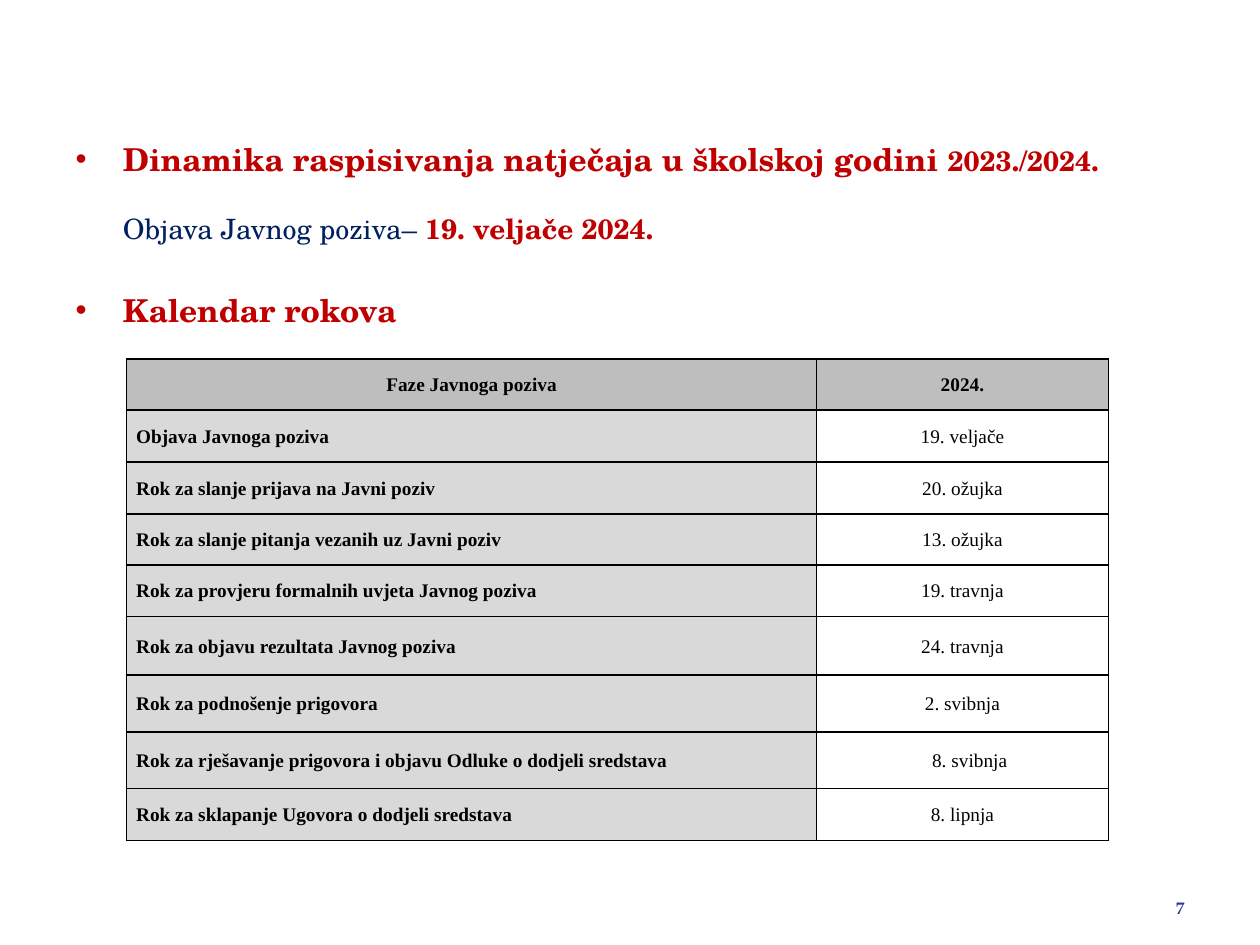
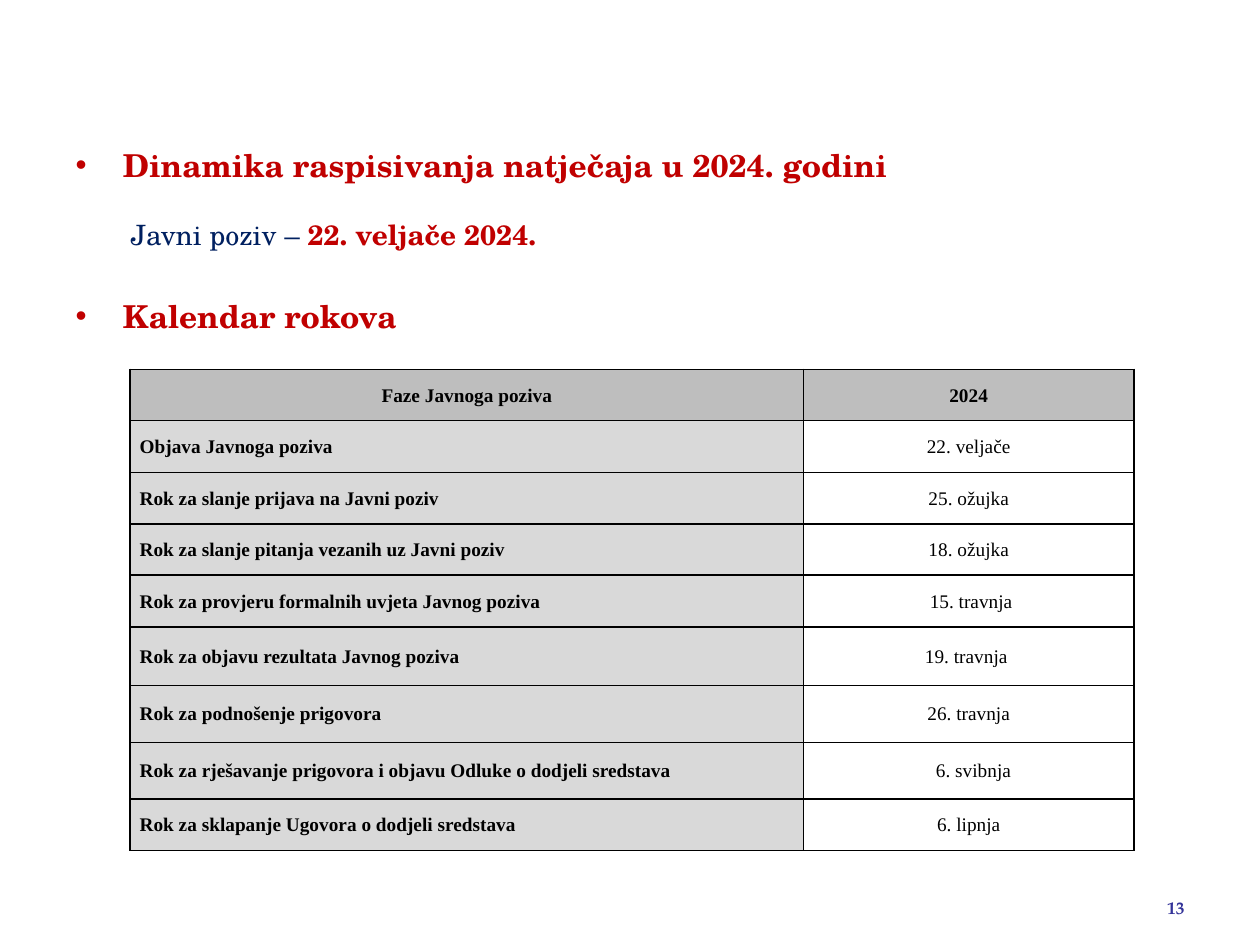
from dataclasses import dataclass

from lxml import etree
from pptx import Presentation
from pptx.dml.color import RGBColor
from pptx.enum.text import MSO_ANCHOR, MSO_AUTO_SIZE, PP_ALIGN
from pptx.oxml.ns import qn
from pptx.util import Pt

LEFT, CENTER, RIGHT = PP_ALIGN.LEFT, PP_ALIGN.CENTER, PP_ALIGN.RIGHT
MIDDLE, TOP = MSO_ANCHOR.MIDDLE, MSO_ANCHOR.TOP
NO_AUTOFIT = MSO_AUTO_SIZE.NONE
TITLE_AND_CONTENT = 1


@dataclass(frozen=True)
class Theme:
    red: str = "C00000"
    navy: str = "002060"
    indigo: str = "333399"
    black: str = "000000"
    header_fill: str = "BEBEBE"
    phase_fill: str = "D9D9D9"
    body_font: str = "TeX Gyre Schola"
    table_font: str = "Times New Roman"
    number_font: str = "TeX Gyre Pagella"
    heading_size: float = 18
    body_size: float = 16
    table_size: float = 11
    number_size: float = 10


THEME = Theme()
NUMBER_BOX = (634.3, 508.3, 49.7, 20.9)
INDENT = 27
ANNOUNCEMENT_GAP, CALENDAR_GAP = 19.4, 26
CELL_MARGIN = 5.4
SPACE_WIDTH = 2.75
ROW_HEIGHTS = (29.2, 29.6, 29.6, 29.2, 29.6, 33.4, 32.5, 32.4, 29.6)
PHASES = (
    "Objava Javnoga poziva",
    "Rok za slanje prijava na Javni poziv",
    "Rok za slanje pitanja vezanih uz Javni poziv",
    "Rok za provjeru formalnih uvjeta Javnog poziva",
    "Rok za objavu rezultata Javnog poziva",
    "Rok za podnošenje prigovora",
    "Rok za rješavanje prigovora i objavu Odluke o dodjeli sredstava",
    "Rok za sklapanje Ugovora o dodjeli sredstava",
)


def add_text(paragraph, text, *, font=THEME.body_font, size=THEME.body_size,
             color=THEME.red, bold=True):
    run = paragraph.add_run()
    run.text = text
    run.font.name = font
    run.font.size = Pt(size)
    run.font.bold = bold
    run.font.color.rgb = RGBColor.from_string(color)


def place(shape, box):
    shape.left, shape.top, shape.width, shape.height = map(Pt, box)


def add_page_number(slide, box, number):
    frame = slide.shapes.add_textbox(*map(Pt, box)).text_frame
    frame.word_wrap = True
    frame.vertical_anchor = MIDDLE
    paragraph = frame.paragraphs[0]
    paragraph.alignment = RIGHT
    add_text(paragraph, str(number), font=THEME.number_font,
             size=THEME.number_size, color=THEME.indigo)


def remove_bullet(paragraph, indent):
    properties = paragraph._p.get_or_add_pPr()
    properties.set("marL", str(Pt(indent)))
    properties.set("indent", "0")
    etree.SubElement(properties, qn("a:buNone"))


def fill_outline(body, box, heading, announcement, nudge):
    """Write the two bulleted headings; heading and announcement hold lead and date."""
    place(body, box)
    frame = body.text_frame
    frame.auto_size = NO_AUTOFIT
    frame.vertical_anchor = TOP

    dynamics = frame.paragraphs[0]
    dynamics.space_before = Pt(0)
    lead, year = heading
    add_text(dynamics, lead, size=THEME.heading_size)
    if year:
        add_text(dynamics, year)

    call = frame.add_paragraph()
    remove_bullet(call, INDENT + nudge)
    call.space_before = Pt(ANNOUNCEMENT_GAP)
    lead, date = announcement
    add_text(call, lead, color=THEME.navy, bold=False)
    add_text(call, date)

    calendar = frame.add_paragraph()
    calendar.space_before = Pt(CALENDAR_GAP)
    add_text(calendar, "Kalendar rokova", size=THEME.heading_size)


def add_borders(cell):
    properties = cell._tc.get_or_add_tcPr()
    for side in ("lnL", "lnR", "lnT", "lnB"):
        line = etree.SubElement(properties, qn(f"a:{side}"), w=str(Pt(1)))
        fill = etree.SubElement(line, qn("a:solidFill"))
        etree.SubElement(fill, qn("a:srgbClr"), val=THEME.black)


def fill_cell(cell, text, *, fill=None, bold=True, align=CENTER, nudge=0):
    """Format one cell; nudge shifts the text by a number of space widths."""
    cell.vertical_anchor = MIDDLE
    cell.margin_top = cell.margin_bottom = 0
    cell.margin_left = Pt(CELL_MARGIN + SPACE_WIDTH * max(nudge, 0))
    cell.margin_right = Pt(CELL_MARGIN + SPACE_WIDTH * max(-nudge, 0))
    add_borders(cell)
    if fill:
        cell.fill.solid()
        cell.fill.fore_color.rgb = RGBColor.from_string(fill)
    else:
        cell.fill.background()
    paragraph = cell.text_frame.paragraphs[0]
    paragraph.alignment = align
    paragraph.line_spacing = 1.06
    add_text(paragraph, text, font=THEME.table_font, size=THEME.table_size,
             color=THEME.black, bold=bold)


def add_deadlines(slide, origin, column_widths, year, dates, nudges):
    left, top = origin
    table = slide.shapes.add_table(
        len(ROW_HEIGHTS), len(column_widths), Pt(left), Pt(top),
        Pt(sum(column_widths)), Pt(sum(ROW_HEIGHTS))).table
    table.first_row = table.horz_banding = False
    for column, width in zip(table.columns, column_widths):
        column.width = Pt(width)
    for row, height in zip(table.rows, ROW_HEIGHTS):
        row.height = Pt(height)

    for column, label in enumerate(("Faze Javnoga poziva", year)):
        fill_cell(table.cell(0, column), label, fill=THEME.header_fill)
    for row, (phase, date) in enumerate(zip(PHASES, dates), start=1):
        fill_cell(table.cell(row, 0), phase, fill=THEME.phase_fill, align=LEFT)
        fill_cell(table.cell(row, 1), date, bold=False, nudge=nudges.get(date, 0))


def add_calendar_slide(deck, number, outline, deadlines):
    slide = deck.slides.add_slide(deck.slide_layouts[TITLE_AND_CONTENT])
    title = slide.shapes.title
    title.element.getparent().remove(title.element)
    add_page_number(slide, NUMBER_BOX, number)
    fill_outline(slide.placeholders[1], **outline)
    add_deadlines(slide, **deadlines)


def main():
    deck = Presentation()
    deck.slide_width, deck.slide_height = Pt(720), Pt(540)
    add_calendar_slide(
        deck, 7,
        outline=dict(
            box=(36, 76.3, 623.5, 398),
            heading=("Dinamika raspisivanja natječaja u školskoj godini ", "2023./2024."),
            announcement=("Objava Javnog poziva– ", "19. veljače 2024."),
            nudge=0),
        deadlines=dict(
            origin=(72.4, 205.2), column_widths=(394.2, 166.8), year="2024.",
            dates=("19. veljače", "20. ožujka", "13. ožujka", "19. travnja",
                   "24. travnja", "2. svibnja", "8. svibnja", "8. lipnja"),
            nudges={"8. svibnja": 3}))
    add_calendar_slide(
        deck, 13,
        outline=dict(
            box=(36, 79.9, 648, 428.4),
            heading=("Dinamika raspisivanja natječaja u 2024. godini", ""),
            announcement=("Javni poziv – ", "22. veljače 2024."),
            nudge=4.5),
        deadlines=dict(
            origin=(74.4, 211.1), column_widths=(384.7, 188.9), year="2024",
            dates=("22. veljače", "25. ožujka", "18. ožujka", "15. travnja",
                   "19. travnja", "26. travnja", "6. svibnja", "6. lipnja"),
            nudges={"15. travnja": 1, "19. travnja": -1, "6. svibnja": 2}))
    deck.save("out.pptx")


if __name__ == "__main__":
    main()
